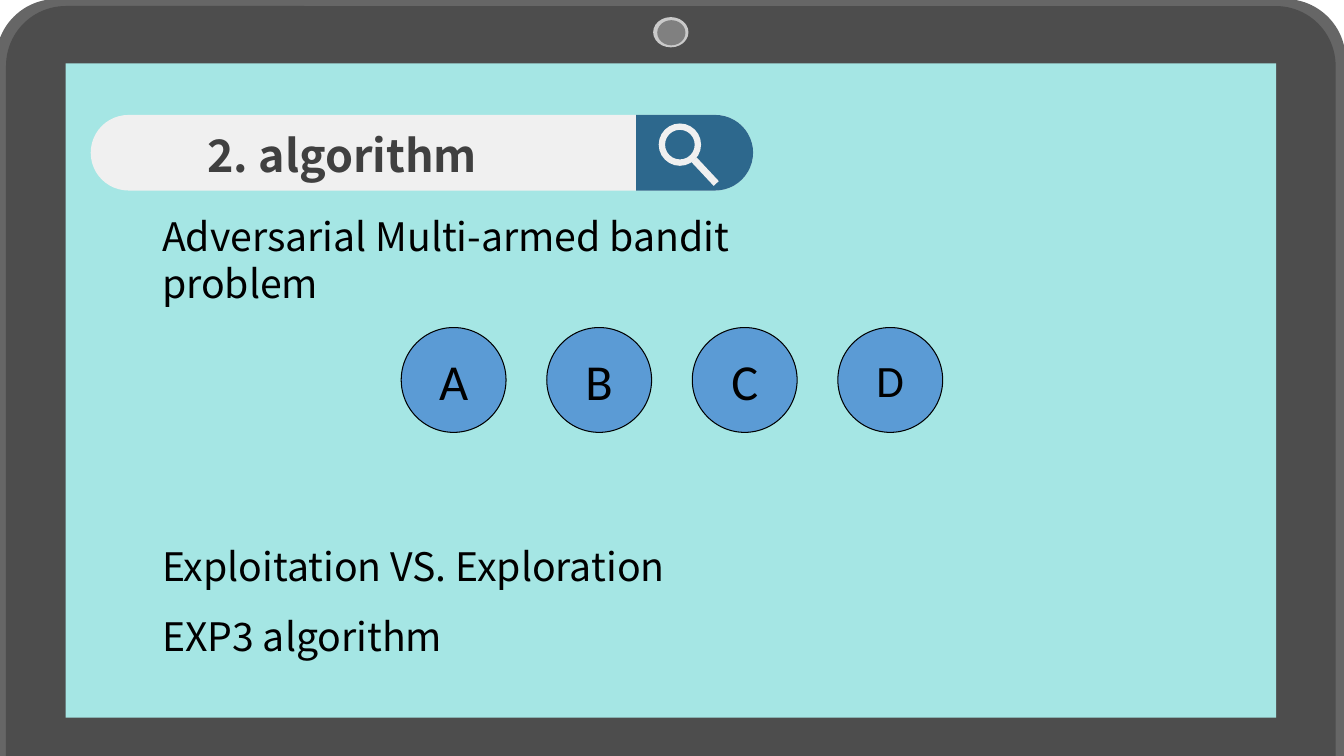
from lxml.etree import SubElement
from pptx import Presentation
from pptx.dml.color import RGBColor
from pptx.enum.shapes import MSO_CONNECTOR, MSO_SHAPE as Shape
from pptx.enum.text import MSO_ANCHOR as Anchor, PP_ALIGN as Align
from pptx.oxml.ns import qn
from pptx.util import Inches, Pt


def color(hex_code):
    return RGBColor.from_string(hex_code)


class Deck:
    """Holds the style and current slide; lengths are percent of the slide's size."""

    SANS, LABEL = "Noto Sans CJK SC", "Calibri"
    BLACK, LIGHT, BLUE = "000000", "F0F0F0", "2D688D"

    def __init__(self):
        self.prs = Presentation()
        self.prs.slide_width, self.prs.slide_height = Inches(13.33), Inches(7.5)
        self.slide = self.prs.slides.add_slide(self.prs.slide_layouts[6])

    def x(self, share):
        return round(self.prs.slide_width * share / 100)

    def y(self, share):
        return round(self.prs.slide_height * share / 100)

    def box(self, left, top, width, height):
        return self.x(left), self.y(top), self.x(width), self.y(height)

    def shape(self, kind, area, fill, adjust=None, line=None):
        sp = self.slide.shapes.add_shape(kind, *self.box(*area))
        sp.shadow.inherit = False
        sp.fill.solid()
        sp.fill.fore_color.rgb = color(fill)
        if line:
            sp.line.color.rgb = color(line)
            sp.line.width = Pt(0.75)
        else:
            sp.line.fill.background()
        if adjust is not None:
            sp.adjustments[0] = adjust
        return sp

    def right_tab(self, area, fill):
        sp = self.shape(Shape.ROUND_2_SAME_RECTANGLE, area, fill, 0.5)
        left, top, width, height = self.box(*area)
        sp.left, sp.top = left + (width - height) // 2, top + (height - width) // 2
        sp.width, sp.height = height, width
        sp.rotation = 90

    def line(self, start, end, stroke, width):
        ends = [self.x(start[0]), self.y(start[1]), self.x(end[0]), self.y(end[1])]
        cx = self.slide.shapes.add_connector(MSO_CONNECTOR.STRAIGHT, *ends)
        cx.line.color.rgb = color(stroke)
        cx.line.width = Pt(width)
        SubElement(cx._element.spPr, qn("a:effectLst"))

    def run(self, p, text, size, font, fill, bold=False):
        r = p.add_run()
        r.text = text
        r.font.size, r.font.name, r.font.bold = Pt(size), font, bold
        r.font.color.rgb = color(fill)

    def text(self, area):
        tf = self.slide.shapes.add_textbox(*self.box(*area)).text_frame
        tf.word_wrap = True
        return tf

    def title(self, area, text):
        tf = self.text(area)
        self.run(tf.paragraphs[0], text, 32, self.SANS, "404040", True)

    def body(self, area, lines):
        tf = self.text(area)
        for i, (text, before, spacing) in enumerate(lines):
            p = tf.paragraphs[0] if i == 0 else tf.add_paragraph()
            p.space_before, p.line_spacing = Pt(before), Pt(spacing)
            self.run(p, text, 28, self.SANS, self.BLACK)

    def arm(self, area, letter, size):
        sp = self.shape(Shape.OVAL, area, "5B9BD5", line=self.BLACK)
        tf = sp.text_frame
        tf.vertical_anchor = Anchor.MIDDLE
        p = tf.paragraphs[0]
        p.alignment = Align.CENTER
        self.run(p, letter, size, self.LABEL, self.BLACK)


def main():
    deck = Deck()
    deck.shape(Shape.ROUNDED_RECTANGLE, (-0.3, -0.13, 100.43, 114.8), "666666", 0.07)
    deck.shape(Shape.ROUNDED_RECTANGLE, (0.45, 0.8, 98.93, 112.93), "4D4D4D", 0.07)
    deck.shape(Shape.RECTANGLE, (4.88, 8.4, 90.08, 86.53), "A5E6E4")
    deck.shape(Shape.OVAL, (48.6, 2.27, 2.63, 4), "CACACA")
    deck.shape(Shape.OVAL, (48.9, 2.67, 2.1, 3.33), "808080")

    deck.shape(Shape.ROUNDED_RECTANGLE, (6.75, 15.2, 49.28, 10), deck.LIGHT, 0.5)
    deck.right_tab((47.33, 15.2, 8.7, 10), deck.BLUE)
    deck.shape(Shape.DONUT, (49.01, 16.33, 3.15, 5.6), deck.LIGHT, 0.15)
    deck.line((51.64, 21.13), (53.29, 24.27), deck.LIGHT, 5)
    deck.title((14.7, 16.27, 22.28, 8.53), "2. algorithm")

    pitch = 33.6
    deck.body((11.33, 27.47, 52.65, 73.6), [
        ("Adversarial Multi-armed bandit problem", 0, pitch),
        ("Exploitation VS. Exploration", 5 * pitch, pitch),
        ("EXP3 algorithm", 0, 1.5 * pitch),
    ])
    for i, (letter, size) in enumerate([("A", 36), ("B", 36), ("C", 36), ("D", 32)]):
        deck.arm((29.85 + 10.83 * i, 43.33, 7.8, 13.87), letter, size)
    deck.prs.save("out.pptx")


if __name__ == "__main__":
    main()
